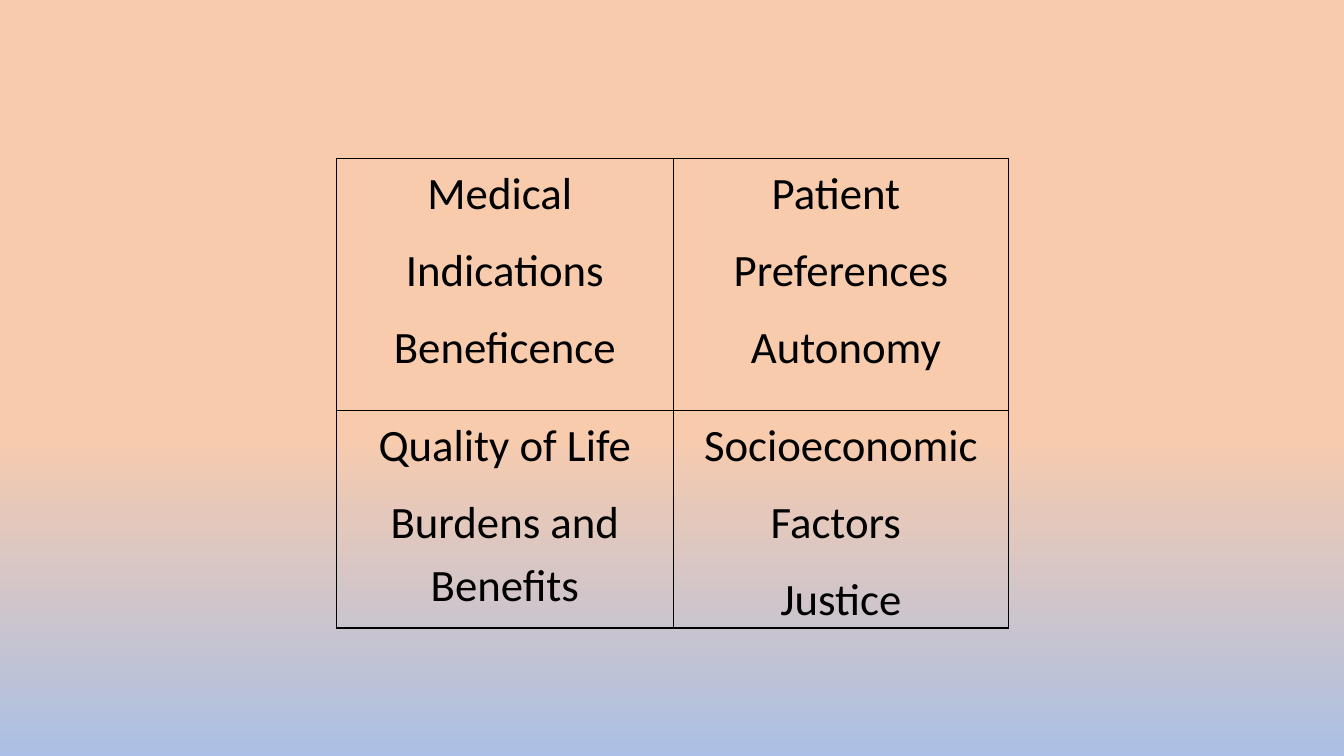
from lxml import etree
from pptx import Presentation
from pptx.dml.color import RGBColor
from pptx.enum.text import PP_ALIGN
from pptx.oxml.ns import qn
from pptx.util import Cm, Pt

CENTER = PP_ALIGN.CENTER
BLANK_LAYOUT = 6
COLORS = {"peach": "F8CBAD", "blue": "ABC0E4", "ink": "000000"}
FOUR_BOXES = [
    [["Medical ", "Indications", "Beneficence"],
     ["Patient ", "Preferences", " Autonomy"]],
    [["Quality of Life", "Burdens and Benefits"],
     ["Socioeconomic", "Factors ", "Justice"]],
]
COLUMN_WIDTHS = [Cm(8.51), Cm(8.43)]
ROW_HEIGHTS = [Cm(6.35), Cm(5.41)]


def paint_background(slide):
    """Fill the slide with a vertical gradient from peach to blue."""
    fill = slide.background.fill
    fill.gradient()
    fill.gradient_angle = 270
    for stop, position, name in zip(fill.gradient_stops, (0.57, 1), ("peach", "blue")):
        stop.position = position
        stop.color.rgb = RGBColor.from_string(COLORS[name])


def outline_cell(cell):
    """Draw a thin line on each side of a cell."""
    properties = cell._tc.get_or_add_tcPr()
    for side in ("a:lnL", "a:lnR", "a:lnT", "a:lnB"):
        border = etree.SubElement(properties, qn(side), w=str(Pt(1)))
        solid = etree.SubElement(border, qn("a:solidFill"))
        etree.SubElement(solid, qn("a:srgbClr"), val=COLORS["ink"])


def fill_cell(cell, lines):
    """Write one centred paragraph per line in a clear, outlined cell."""
    outline_cell(cell)
    cell.fill.background()
    cell.margin_left = cell.margin_right = Cm(0.15)
    cell.margin_top, cell.margin_bottom = Cm(0.02), 0
    frame = cell.text_frame
    frame.text = "\n".join(lines)
    for paragraph in frame.paragraphs:
        paragraph.alignment = CENTER
        paragraph.line_spacing = 1.15
        paragraph.space_after = Pt(10)
        paragraph.font.name = "Calibri"
        paragraph.font.size = Pt(32)
        paragraph.font.color.rgb = RGBColor.from_string(COLORS["ink"])


def add_four_boxes(slide, left, top):
    """Place the table of four ethical topics with its corner at left, top."""
    boxes = slide.shapes.add_table(
        len(ROW_HEIGHTS), len(COLUMN_WIDTHS), left, top,
        sum(COLUMN_WIDTHS), sum(ROW_HEIGHTS)).table
    boxes.first_row = boxes.horz_banding = False
    for column, width in zip(boxes.columns, COLUMN_WIDTHS):
        column.width = width
    for row, height, topics in zip(boxes.rows, ROW_HEIGHTS, FOUR_BOXES):
        row.height = height
        for cell, lines in zip(row.cells, topics):
            fill_cell(cell, lines)


def main():
    """Build and save the slide."""
    deck = Presentation()
    deck.slide_width, deck.slide_height = Cm(33.87), Cm(19.05)
    slide = deck.slides.add_slide(deck.slide_layouts[BLANK_LAYOUT])
    paint_background(slide)
    add_four_boxes(slide, Cm(8.47), Cm(3.99))
    deck.save("out.pptx")


if __name__ == "__main__":
    main()
